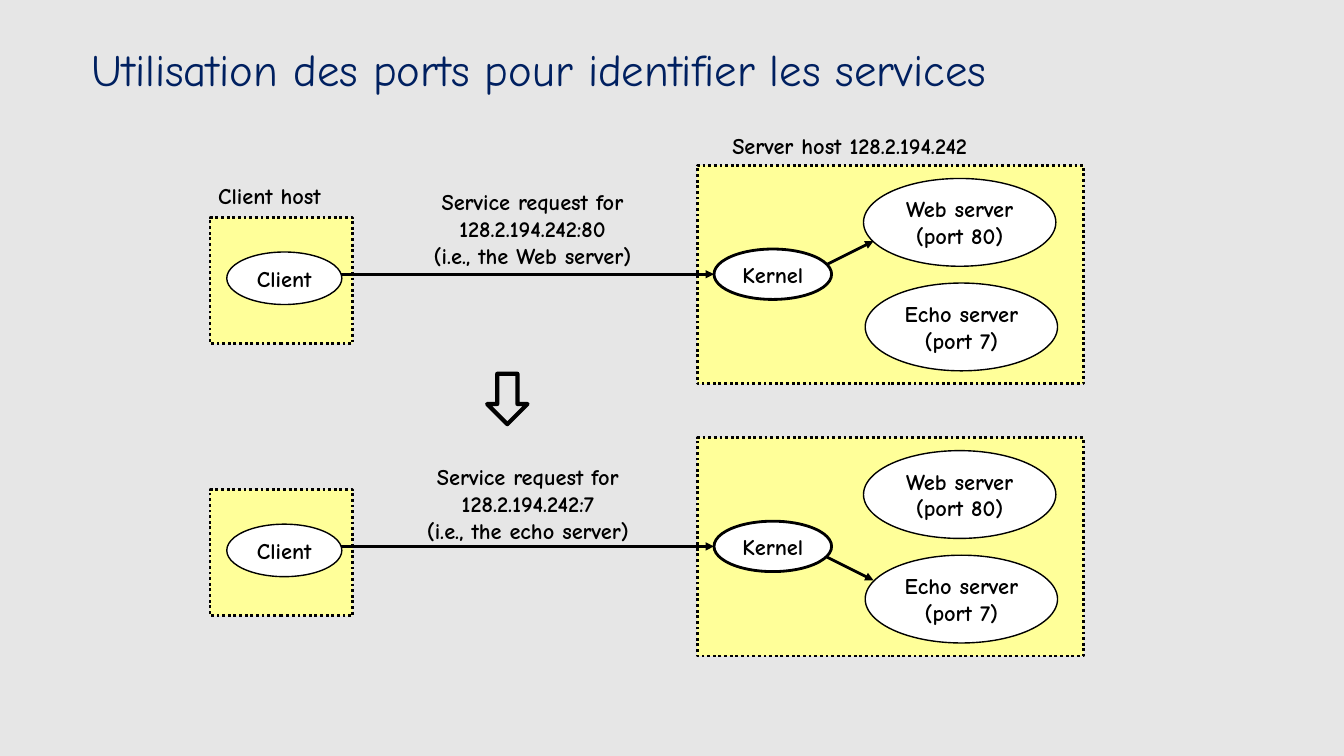
from lxml.etree import SubElement
from pptx import Presentation
from pptx.dml.color import RGBColor as Color
from pptx.enum.dml import MSO_LINE as Dash
from pptx.enum.shapes import MSO_CONNECTOR as Connector, MSO_SHAPE as Shape
from pptx.enum.text import MSO_ANCHOR as Anchor, PP_ALIGN as Align
from pptx.oxml.ns import qn
from pptx.util import Inches, Pt

COLORS = {
    name: Color.from_string(value)
    for name, value in {
        "page": "E6E6E6", "host": "FFFF99", "process": "FFFFFF",
        "ink": "000000", "title": "002060",
    }.items()
}
CELL = Inches(1 / 12)  # the slide is a grid of 160 columns by 90 rows
SCENE_STEP = 32.4  # rows from the first scene to the second

deck = Presentation()
deck.slide_width, deck.slide_height = 160 * CELL, 90 * CELL
page = deck.slides.add_slide(deck.slide_layouts[6])
page.background.fill.solid()
page.background.fill.fore_color.rgb = COLORS["page"]


def write(box, lines, align=Align.CENTER, wrap=True, anchor=Anchor.TOP,
          size=16, bold=True, color="ink"):
    frame = box.text_frame
    frame.word_wrap, frame.vertical_anchor = wrap, anchor
    frame.text = "\n".join(lines)
    font_format = {"name": "Comic Neue", "size": Pt(size), "bold": bold}
    for para in frame.paragraphs:
        para.alignment = align
        for span in para.runs:
            for key, value in font_format.items():
                setattr(span.font, key, value)
            span.font.color.rgb = COLORS[color]


def draw(kind, place, fill, weight):
    """Add an outlined shape; place is column, row, columns wide, rows high."""
    shape = page.shapes.add_shape(kind, *(round(n * CELL) for n in place))
    shape.shadow.inherit = False
    if fill:
        shape.fill.solid()
        shape.fill.fore_color.rgb = COLORS[fill]
    else:
        shape.fill.background()
    shape.line.color.rgb = COLORS["ink"]
    shape.line.width = Pt(weight)
    return shape


# Title and captions
captions = [
    ((2.6, 4, 123.2, 8.4), ["Utilisation des ports pour identifier les services"],
     {"size": 32, "bold": False, "color": "title", "anchor": Anchor.MIDDLE}),
    ((24.8, 21.1, 16.3, 4.4), ["Client host"], {"align": Align.LEFT}),
    ((86, 15.1, 38.8, 4.4), ["Server host 128.2.194.242"], {"align": Align.LEFT}),
]
for place, lines, style in captions:
    write(page.shapes.add_textbox(*(round(n * CELL) for n in place)), lines, **style)

# One scene per request: caption place, caption, end rows of the inner arrow
scenes = [
    ((46, 21.85, 34.8, 10.8), ("128.2.194.242:80", "(i.e., the Web server)"), (31.7, 28.7)),
    ((46.9, 22.2, 31.9, 10.8), ("128.2.194.242:7", "(i.e., the echo server)"), (33.7, 36.7)),
]
hosts = [(25, 25.9, 17, 15), (83, 19.7, 46, 26)]
servers = [
    ((102.8, 21.25, 22.9, 10.45), ["Web server", "(port 80)"], 1),
    ((103, 33.7, 22.9, 10.45), ["Echo server", "(port 7)"], 1),
]
endpoints = [
    ((85, 29.65, 14, 6), ["Kernel"], 2),
    ((27, 30, 13.7, 6.25), ["Client"], 1),
]

for index, (request_place, request, (start_row, end_row)) in enumerate(scenes):
    drop = index * SCENE_STEP

    for column, row, width, height in hosts:
        host = draw(Shape.RECTANGLE, (column, row + drop, width, height), "host", 2)
        host.line.dash_style = Dash.ROUND_DOT

    column, row, width, height = request_place
    place = (column, row + drop, width, height)
    box = page.shapes.add_textbox(*(round(n * CELL) for n in place))
    write(box, ["Service request for", *request])

    # Arrows lie above the servers and below the kernel and the client
    for group in (servers, endpoints):
        if group is endpoints:
            for ends in ((40, 32.65, 85, 32.65), (98, start_row, 104, end_row)):
                x1, y1, x2, y2 = ends
                points = (x1, y1 + drop, x2, y2 + drop)
                arrow = page.shapes.add_connector(
                    Connector.STRAIGHT, *(round(n * CELL) for n in points))
                arrow.line.color.rgb = COLORS["ink"]
                arrow.line.width = Pt(2)
                SubElement(arrow.line._get_or_add_ln(), qn("a:tailEnd"), type="triangle")
                SubElement(arrow._element.spPr, qn("a:effectLst"))
        for (column, row, width, height), lines, weight in group:
            process = draw(Shape.OVAL, (column, row + drop, width, height), "process", weight)
            write(process, lines, wrap=False, anchor=Anchor.MIDDLE)

draw(Shape.DOWN_ARROW, (58, 44.5, 4.8, 6), None, 3)

deck.save("out.pptx")
